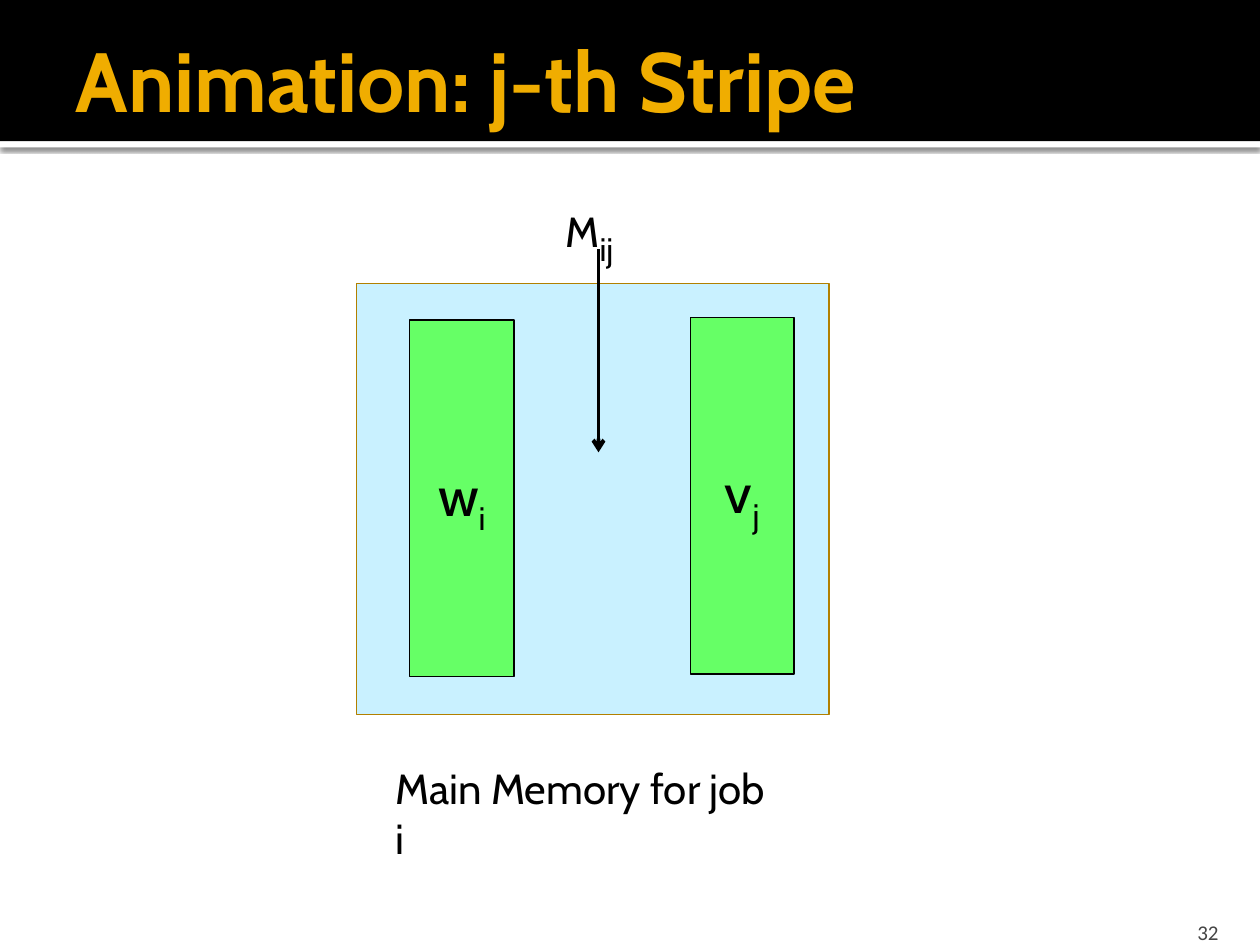
from lxml.etree import SubElement
from pptx import Presentation
from pptx.dml.color import RGBColor
from pptx.enum.shapes import MSO_CONNECTOR as Connector, MSO_SHAPE as Shape
from pptx.enum.text import MSO_ANCHOR as Anchor, PP_ALIGN as Align
from pptx.oxml.ns import qn
from pptx.util import Inches, Pt

BLACK = "000000"


def color(value):
    """Turn a hex string into a colour."""
    return RGBColor.from_string(value)


def apply_format(target, **values):
    """Set each given attribute on the target."""
    for name, value in values.items():
        setattr(target, name, value)


def add_span(para, text, size, tint=BLACK, font="Cabin", bold=False, baseline=None):
    """Add a formatted run, lowered when a baseline is given."""
    span = para.add_run()
    span.text = text
    apply_format(span.font, name=font, size=Pt(size), bold=bold)
    span.font.color.rgb = color(tint)
    if baseline:
        span._r.get_or_add_rPr().set("baseline", str(baseline * 1000))


def add_symbol(para, base, index, size, index_size):
    """Write a letter with its subscript."""
    add_span(para, base, size)
    add_span(para, index, index_size, baseline=-25)


def add_rect(page, place, fill, line=None):
    """Add a flat rectangle."""
    box = page.shapes.add_shape(Shape.RECTANGLE, *map(Inches, place))
    box.shadow.inherit = False
    box.fill.solid()
    box.fill.fore_color.rgb = color(fill)
    if line:
        box.line.color.rgb = color(line)
        box.line.width = Pt(1)
    else:
        box.line.fill.background()
    return box


def add_shadow(box):
    """Cast a soft shadow straight down."""
    effects = box._element.spPr.find(qn("a:effectLst"))
    shadow = SubElement(effects, qn("a:outerShdw"), blurRad=str(Pt(2.5)),
                        dist=str(Pt(0.8)), dir="5400000", rotWithShape="0")
    tint = SubElement(shadow, qn("a:srgbClr"), val=BLACK)
    SubElement(tint, qn("a:alpha"), val="60000")


def add_title(page, text):
    """Place the title over the header band."""
    title = page.shapes.title
    apply_format(title, left=Inches(0.5), top=Inches(0.17),
                 width=Inches(9.5), height=Inches(0.92))
    apply_format(title.text_frame, vertical_anchor=Anchor.MIDDLE, word_wrap=True,
                 margin_right=Inches(0.05))
    para = title.text_frame.paragraphs[0]
    para.alignment = Align.LEFT
    add_span(para, text, 48, "F0AD00", bold=True)
    page.shapes._spTree.append(title._element)


def add_text(page, place, **values):
    """Add a wrapping text box and return its paragraph."""
    frame = page.shapes.add_textbox(*map(Inches, place)).text_frame
    apply_format(frame, word_wrap=True, **values)
    return frame.paragraphs[0]


def add_vector(page, place, base, index):
    """Add a green block labelled with a vector name."""
    frame = add_rect(page, place, "66FF66", BLACK).text_frame
    frame.vertical_anchor = Anchor.MIDDLE
    para = frame.paragraphs[0]
    para.alignment = Align.CENTER
    add_symbol(para, base, index, 32, 32)


def add_arrow(page, x, top, bottom):
    """Add a downward arrow."""
    arrow = page.shapes.add_connector(
        Connector.STRAIGHT, *map(Inches, (x, top, x, bottom)))
    arrow.line.color.rgb = color(BLACK)
    arrow.line.width = Pt(2.25)
    SubElement(arrow.line._get_or_add_ln(), qn("a:tailEnd"), type="arrow")
    SubElement(arrow._element.spPr, qn("a:effectLst"))


def main():
    """Build the slide and save it."""
    deck = Presentation()
    apply_format(deck, slide_width=Inches(10), slide_height=Inches(7.5))
    page = deck.slides.add_slide(deck.slide_layouts[5])

    add_shadow(add_rect(page, (0, 1.12, 10, 0.05), "FFFFFF"))
    add_rect(page, (0, 0, 10, 1.12), BLACK)
    add_title(page, "Animation: j-th Stripe")

    number = add_text(page, (8.97, 7.2, 0.8, 0.3),
                      vertical_anchor=Anchor.BOTTOM, margin_bottom=0)
    number.alignment = Align.RIGHT
    add_span(number, "32", 12, "454545", "Calibri")

    add_rect(page, (2.83, 2.25, 3.75, 3.42), "C9F1FF", "B28000")
    add_span(add_text(page, (3.04, 6, 3.26, 0.5)), "Main Memory for job i", 24)
    add_vector(page, (3.25, 2.54, 0.83, 2.83), "w", "i")
    add_vector(page, (5.48, 2.52, 0.82, 2.83), "v", "j")
    add_symbol(add_text(page, (4.39, 1.47, 0.62, 0.5)), "M", "ij", 24, 32)
    add_arrow(page, 4.75, 1.98, 3.59)

    deck.save("out.pptx")


if __name__ == "__main__":
    main()
